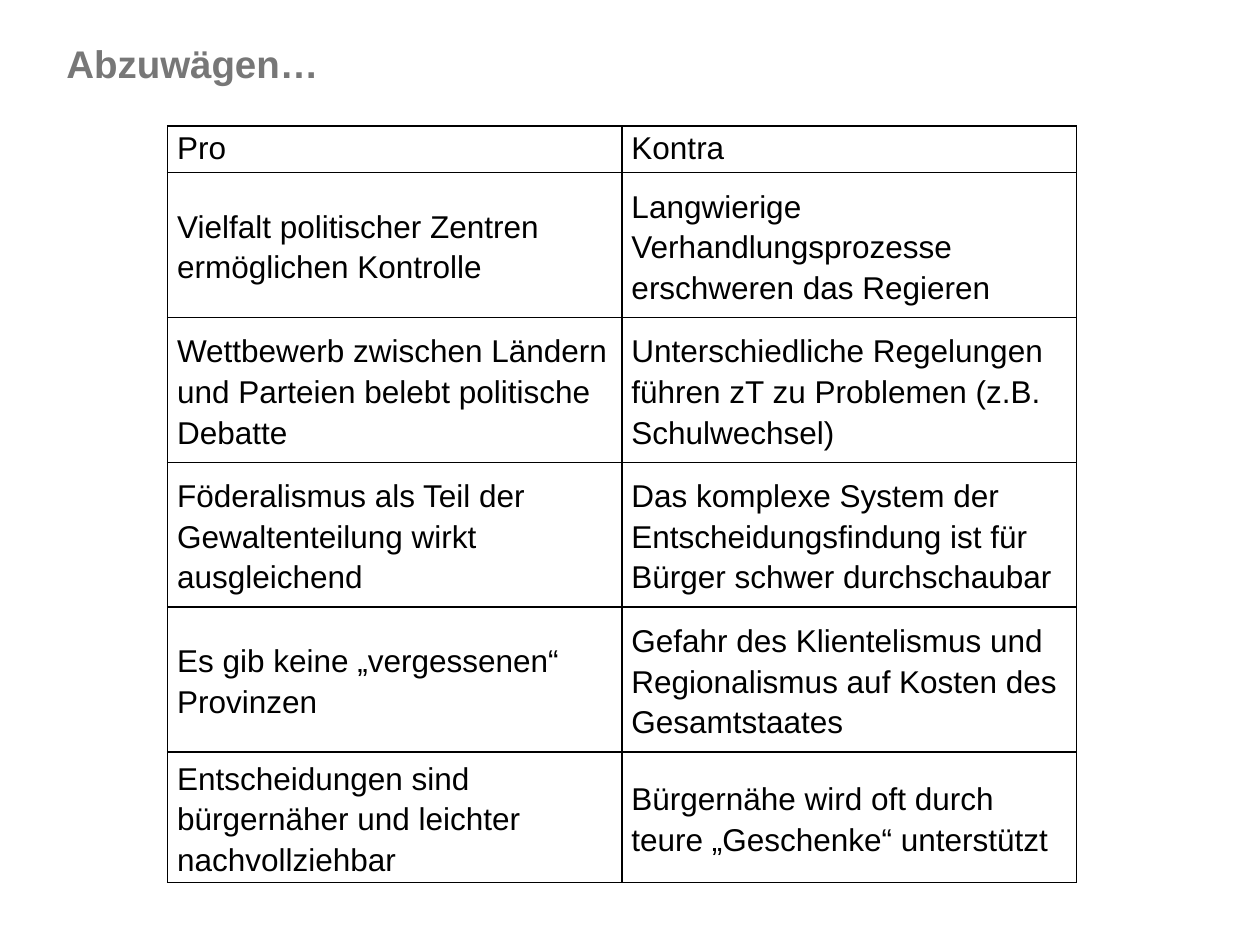
from lxml import etree
from pptx import Presentation
from pptx.dml.color import RGBColor
from pptx.enum import text
from pptx.oxml import ns
from pptx.util import Cm, Pt

TITLE = "Abzuwägen…"
ARGUMENTS = [
    ("Pro", "Kontra"),
    ("Vielfalt politischer Zentren ermöglichen Kontrolle",
     "Langwierige Verhandlungsprozesse erschweren das Regieren"),
    ("Wettbewerb zwischen Ländern und Parteien belebt politische Debatte",
     "Unterschiedliche Regelungen führen zT zu Problemen (z.B. Schulwechsel)"),
    ("Föderalismus als Teil der Gewaltenteilung wirkt ausgleichend",
     "Das komplexe System der Entscheidungsfindung ist für Bürger schwer durchschaubar"),
    ("Es gib keine „vergessenen“ Provinzen",
     "Gefahr des Klientelismus und Regionalismus auf Kosten des Gesamtstaates"),
    ("Entscheidungen sind bürgernäher und leichter nachvollziehbar",
     "Bürgernähe wird oft durch teure „Geschenke“ unterstützt"),
]
COLORS = {"title": "777777", "text": "000000", "border": "000000"}
FONT = "Arial"
COLUMN_WIDTH = 9.16
HEADER_HEIGHT, BODY_HEIGHT, LAST_HEIGHT = 0.94, 2.92, 2.46
ROW_HEIGHTS = [HEADER_HEIGHT] + [BODY_HEIGHT] * (len(ARGUMENTS) - 2) + [LAST_HEIGHT]


def style_text(paragraph, size, color, bold=False):
    for span in paragraph.runs:
        span.font.name = FONT
        span.font.size = Pt(size)
        span.font.bold = bold
        span.font.color.rgb = RGBColor.from_string(color)


def add_borders(cell, color, width=1):
    """Draw all four sides; the lines must precede the fill in tcPr."""
    properties = cell._tc.get_or_add_tcPr()
    for position, side in enumerate(("a:lnL", "a:lnR", "a:lnT", "a:lnB")):
        line = etree.Element(ns.qn(side), w=str(Pt(width)))
        fill = etree.SubElement(line, ns.qn("a:solidFill"))
        etree.SubElement(fill, ns.qn("a:srgbClr"), val=color)
        properties.insert(position, line)


def add_title(page):
    box = page.shapes.add_textbox(Cm(1.09), Cm(0.53), Cm(11.61), Cm(1.5))
    frame = box.text_frame
    frame.word_wrap = True
    frame.vertical_anchor = text.MSO_ANCHOR.MIDDLE
    frame.text = TITLE
    style_text(frame.paragraphs[0], 22, COLORS["title"], bold=True)


def fill_cell(cell, content, is_header):
    cell.text = content
    cell.margin_left = cell.margin_right = Cm(0.19)
    cell.margin_top = cell.margin_bottom = 0
    cell.vertical_anchor = text.MSO_ANCHOR.TOP if is_header else text.MSO_ANCHOR.MIDDLE
    cell.fill.background()
    add_borders(cell, COLORS["border"])
    paragraph = cell.text_frame.paragraphs[0]
    paragraph.alignment = text.PP_ALIGN.LEFT
    paragraph.line_spacing = 1.15
    style_text(paragraph, 18, COLORS["text"])


def add_arguments(page):
    columns = len(ARGUMENTS[0])
    table = page.shapes.add_table(
        len(ARGUMENTS), columns, Cm(3.38), Cm(2.54),
        Cm(COLUMN_WIDTH * columns), Cm(sum(ROW_HEIGHTS))).table
    table.first_row = table.horz_banding = False
    for column in table.columns:
        column.width = Cm(COLUMN_WIDTH)
    for r, (row, height) in enumerate(zip(ARGUMENTS, ROW_HEIGHTS)):
        table.rows[r].height = Cm(height)
        for c, content in enumerate(row):
            fill_cell(table.cell(r, c), content, is_header=r == 0)


def main():
    deck = Presentation()
    deck.slide_width, deck.slide_height = Cm(25.4), Cm(19.05)
    page = deck.slides.add_slide(deck.slide_layouts[6])
    add_title(page)
    add_arguments(page)
    deck.save("out.pptx")


if __name__ == "__main__":
    main()
